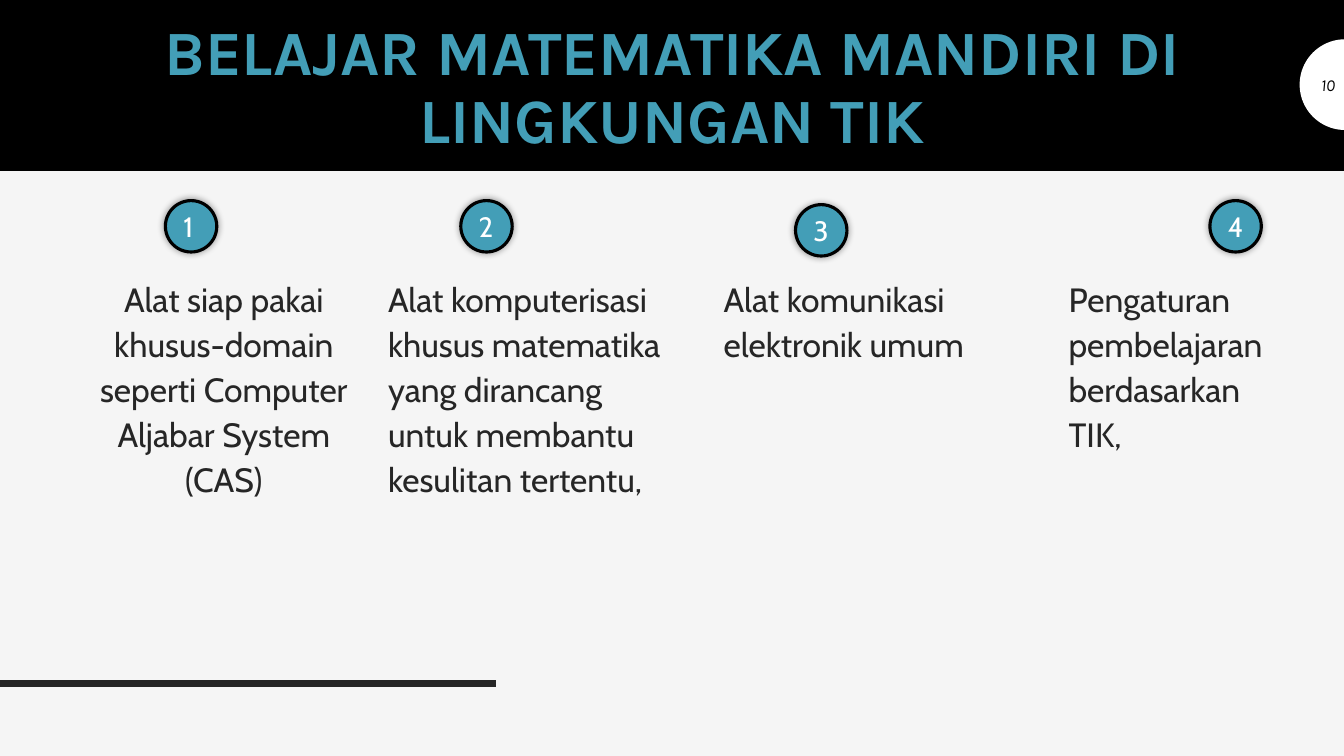
from math import cos, pi, sin

from lxml import etree
from pptx import Presentation
from pptx.dml.color import RGBColor
from pptx.enum.shapes import MSO_CONNECTOR, MSO_SHAPE
from pptx.enum.text import MSO_ANCHOR, PP_ALIGN
from pptx.oxml import parse_xml
from pptx.oxml.ns import nsdecls, qn
from pptx.util import Inches, Pt

BLACK = RGBColor(0x00, 0x00, 0x00)
WHITE = RGBColor(0xFF, 0xFF, 0xFF)
PAPER = RGBColor(0xF5, 0xF5, 0xF5)
INK = RGBColor(0x26, 0x26, 0x26)
TEAL = RGBColor(0x43, 0x9E, 0xB7)
LEFT, CENTER, RIGHT = PP_ALIGN.LEFT, PP_ALIGN.CENTER, PP_ALIGN.RIGHT
TOP, MIDDLE = MSO_ANCHOR.TOP, MSO_ANCHOR.MIDDLE

SHADOW = (f'<a:effectLst {nsdecls("a")}><a:outerShdw blurRad="63500" dist="0">'
          '<a:srgbClr val="000000"><a:alpha val="40000"/></a:srgbClr>'
          '</a:outerShdw></a:effectLst>')

deck = Presentation()
deck.slide_width, deck.slide_height = Inches(13.33), Inches(7.5)
page = deck.slides.add_slide(deck.slide_layouts[6])
page.background.fill.solid()
page.background.fill.fore_color.rgb = PAPER


def add_text(text, left, top, width, height, size, color, font="Cabin",
             align=LEFT, anchor=TOP, spacing=1.0):
    box = page.shapes.add_textbox(Inches(left), Inches(top), Inches(width), Inches(height))
    frame = box.text_frame
    frame.word_wrap = True
    frame.vertical_anchor = anchor
    para = frame.paragraphs[0]
    para.alignment = align
    para.line_spacing = spacing
    span = para.add_run()
    span.text = text
    span.font.name, span.font.size = font, Pt(size)
    span.font.color.rgb = color
    return span


def paint(shape, fill, line=None, weight=1):
    shape.shadow.inherit = False
    shape.fill.solid()
    shape.fill.fore_color.rgb = fill
    if line is None:
        shape.line.fill.background()
    else:
        shape.line.color.rgb = line
        shape.line.width = Pt(weight)


# Footer rule
rule = page.shapes.add_connector(MSO_CONNECTOR.STRAIGHT, Inches(0), Inches(6.78),
                                 Inches(4.92), Inches(6.78))
rule.line.color.rgb = INK
rule.line.width = Pt(4.5)
etree.SubElement(rule._element.spPr, qn("a:effectLst"))

# Title band
band = page.shapes.add_shape(MSO_SHAPE.RECTANGLE, 0, 0, deck.slide_width, Inches(1.69))
paint(band, BLACK, BLACK)
title = add_text("BELAJAR MATEMATIKA MANDIRI DI LINGKUNGAN TIK", 0.83, 0.33, 11.67, 1.1,
                 45, TEAL, "Karla", CENTER, MIDDLE, 0.9)
title.font.bold = True

# Half disc with the page number
center_x, center_y, radius, steps = 13.34, 0.84, 0.45, 48
arc = [(Inches(center_x - radius * sin(pi * step / steps)),
        Inches(center_y - radius * cos(pi * step / steps))) for step in range(steps + 1)]
outline = page.shapes.build_freeform(*arc[0])
outline.add_line_segments(arc[1:], close=True)
paint(outline.convert_to_shape(), WHITE)
number = add_text("10", 12.89, 0.64, 0.45, 0.4, 12, BLACK, "Karla", RIGHT, MIDDLE)
number.font.italic = True

# Numbered columns: badge left and top, text left, width and height, alignment, text
columns = [
    (1.64, 1.99, 0.83, 2.78, 2.03, CENTER,
     "Alat siap pakai khusus-domain seperti Computer Aljabar System (CAS)"),
    (4.57, 1.99, 3.75, 2.91, 2.94, LEFT,
     "Alat komputerisasi khusus matematika yang dirancang untuk membantu "
     "kesulitan tertentu,"),
    (7.89, 2.03, 7.08, 2.66, 3.72, LEFT, "Alat komunikasi elektronik umum"),
    (12, 1.99, 10.5, 2.27, 2.72, LEFT, "Pengaturan pembelajaran berdasarkan TIK,"),
]
for index, (badge_left, badge_top, left, width, height, align, text) in enumerate(columns, 1):
    badge = page.shapes.add_shape(MSO_SHAPE.OVAL, Inches(badge_left), Inches(badge_top),
                                  Inches(0.51), Inches(0.51))
    paint(badge, TEAL, BLACK, 2.25)
    properties = badge._element.spPr
    properties.replace(properties.find(qn("a:effectLst")), parse_xml(SHADOW))
    add_text(str(index), badge_left + 0.08, badge_top + 0.04, 0.36, 0.44, 20, WHITE)
    add_text(text, left, 2.67, width, height, 24, INK, align=align, spacing=1.12)

deck.save("out.pptx")
